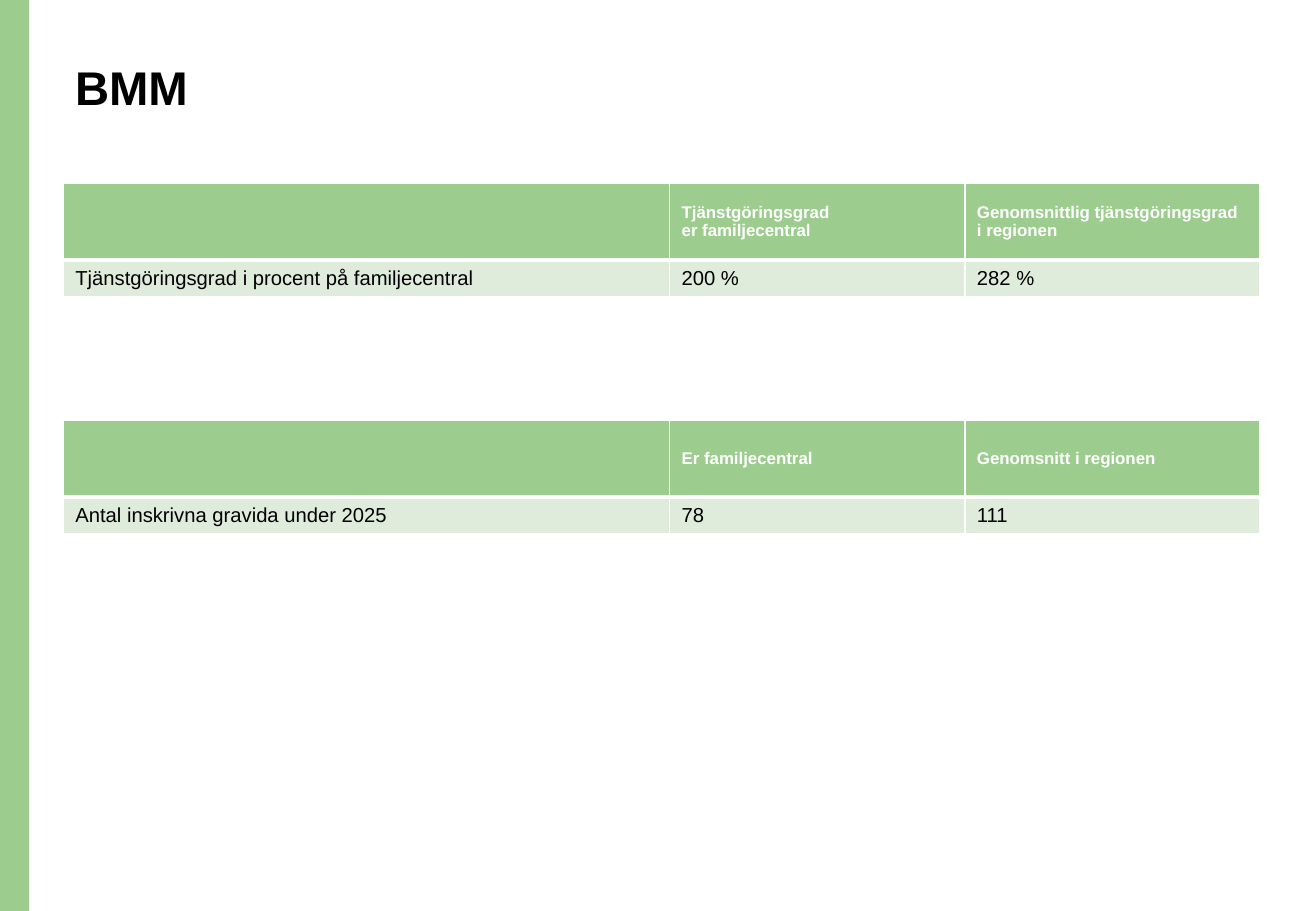
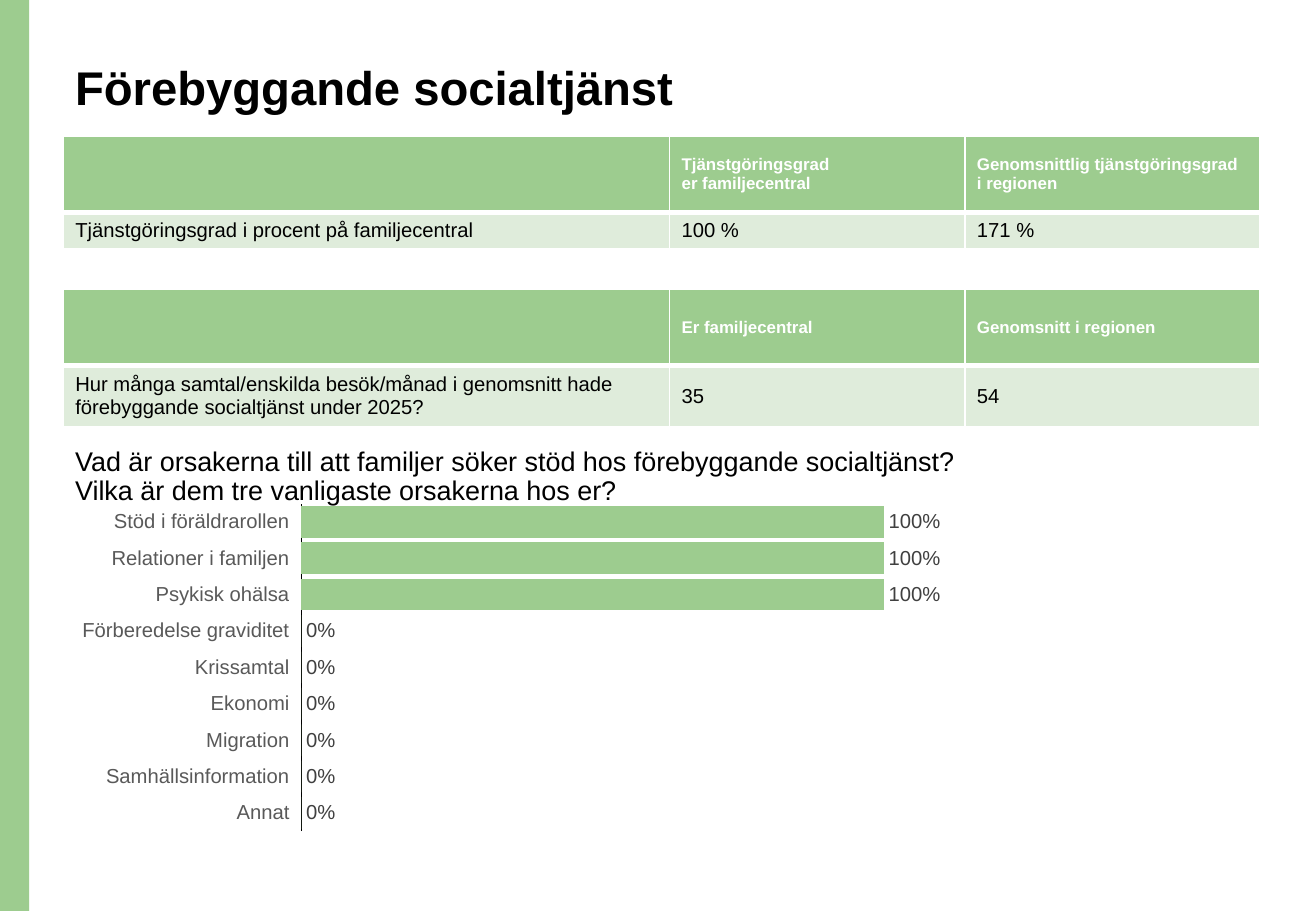
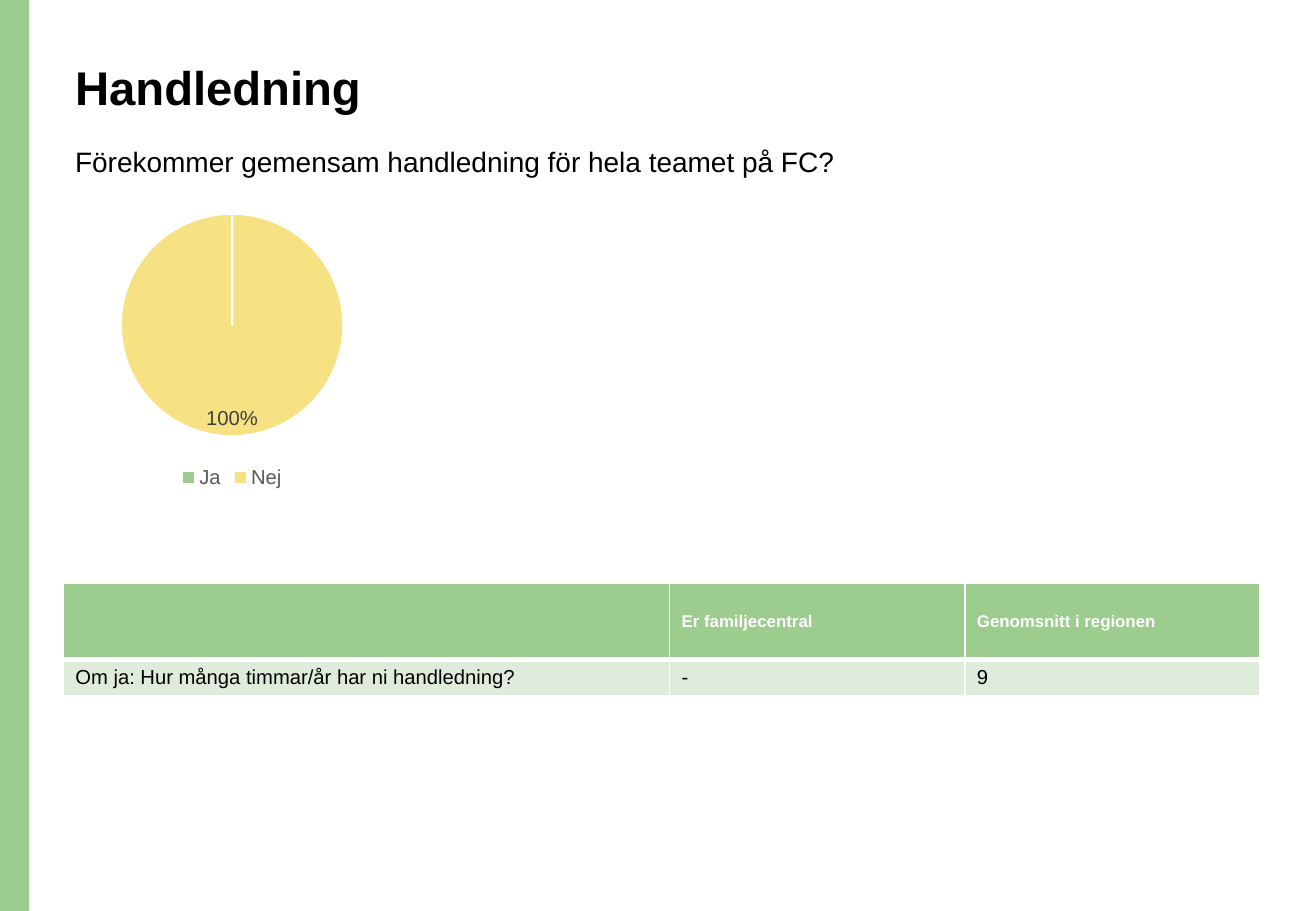
"""Build three slides of family centre statistics with tables and charts."""
from dataclasses import dataclass

from lxml.etree import SubElement
from pptx import Presentation
from pptx.chart.chart import Chart
from pptx.chart.data import CategoryChartData
from pptx.dml.color import RGBColor
from pptx.enum.chart import (
    XL_CHART_TYPE as ChartType,
    XL_LABEL_POSITION as LabelPosition,
    XL_LEGEND_POSITION as LegendPosition,
    XL_TICK_LABEL_POSITION as TickLabelPosition,
    XL_TICK_MARK as TickMark,
)
from pptx.enum.shapes import MSO_SHAPE as Preset
from pptx.enum.text import MSO_ANCHOR as Anchor
from pptx.oxml.ns import qn
from pptx.slide import Slide
from pptx.table import _Cell as Cell
from pptx.text.text import Font
from pptx.util import Pt

PX = 9144
SLIDE_WIDTH, SLIDE_HEIGHT = 1083, 750
BAND_WIDTH = 24
MARGIN = 52
COLUMN_WIDTHS = (499, 243, 243)
HEADER_HEIGHT, BODY_HEIGHT = 63, 23

FONT = "Arial"
GREEN, PALE_GREEN, YELLOW = "9DCC8F", "DFECDB", "F6E183"
BLACK, WHITE = "000000", "FFFFFF"
AXIS_GREY, LABEL_GREY = "595959", "404040"

WORKLOAD_HEADER = (
    "",
    "Tjänstgöringsgrad\ner familjecentral",
    "Genomsnittlig tjänstgöringsgrad\ni regionen",
)
AVERAGE_HEADER = ("", "Er familjecentral", "Genomsnitt i regionen")
WORKLOAD = "Tjänstgöringsgrad i procent på familjecentral"


@dataclass(frozen=True)
class Comparison:
    """A one-row table that sets the centre against the region."""
    top: int
    header: tuple[str, str, str]
    values: tuple[str, str, str]


@dataclass(frozen=True)
class Question:
    """A question shown as running text."""
    top: int
    width: int
    height: int
    size: float
    text: str


@dataclass(frozen=True)
class Answers:
    """The shares of each answer and the place of their chart."""
    top: int
    width: int
    height: int
    shares: dict[str, int]


def rgb(colour: str) -> RGBColor:
    """Turn a hex string into a colour."""
    return RGBColor.from_string(colour)


def style_font(font: Font, size: float, colour: str, bold: bool = False) -> None:
    """Set the face, size, colour and weight of a font."""
    font.name = FONT
    font.size = Pt(size)
    font.bold = bold
    font.color.rgb = rgb(colour)


def add_text(slide: Slide, question: Question, bold: bool = False) -> None:
    """Place a text at the left margin."""
    frame = slide.shapes.add_textbox(
        MARGIN * PX, question.top * PX, question.width * PX, question.height * PX
    ).text_frame
    frame.word_wrap = True
    paragraph = frame.paragraphs[0]
    paragraph.text = question.text
    paragraph.line_spacing = 0.9
    style_font(paragraph.font, question.size, BLACK, bold)


def start_slide(deck: Presentation, title: str) -> Slide:
    """Add a blank slide with the side band and a title."""
    slide = deck.slides.add_slide(deck.slide_layouts[6])
    band = slide.shapes.add_shape(Preset.RECTANGLE, 0, 0, BAND_WIDTH * PX, SLIDE_HEIGHT * PX)
    band.shadow.inherit = False
    band.fill.solid()
    band.fill.fore_color.rgb = rgb(GREEN)
    band.line.fill.background()
    add_text(slide, Question(48, 934, 102, 28, title), bold=True)
    return slide


def add_borders(cell: Cell, top: int, bottom: int) -> None:
    """Give a cell white borders, with the top and bottom widths in points."""
    properties = cell._tc.get_or_add_tcPr()
    for side, width in (("L", 1), ("R", 1), ("T", top), ("B", bottom)):
        line = SubElement(properties, qn(f"a:ln{side}"), w=str(Pt(width)))
        SubElement(SubElement(line, qn("a:solidFill")), qn("a:srgbClr"), val=WHITE)


def add_comparison(slide: Slide, comparison: Comparison) -> None:
    """Draw a comparison table."""
    table = slide.shapes.add_table(
        2, len(COLUMN_WIDTHS), MARGIN * PX, comparison.top * PX,
        sum(COLUMN_WIDTHS) * PX, (HEADER_HEIGHT + BODY_HEIGHT) * PX,
    ).table
    table.horz_banding = False
    for column, width in zip(table.columns, COLUMN_WIDTHS):
        column.width = width * PX
    rows = (
        (comparison.header, HEADER_HEIGHT, GREEN, 10, WHITE, True, 1, 3),
        (comparison.values, BODY_HEIGHT, PALE_GREEN, 12, BLACK, False, 3, 1),
    )
    for row, (texts, height, fill, size, colour, bold, top, bottom) in zip(table.rows, rows):
        row.height = height * PX
        for cell, text in zip(row.cells, texts):
            add_borders(cell, top, bottom)
            cell.fill.solid()
            cell.fill.fore_color.rgb = rgb(fill)
            cell.vertical_anchor = Anchor.MIDDLE
            cell.text_frame.text = text
            for paragraph in cell.text_frame.paragraphs:
                style_font(paragraph.font, size, colour, bold)


def add_answers(
    slide: Slide, answers: Answers, kind: ChartType, position: LabelPosition, label_format: str
) -> Chart:
    """Add a chart of answer shares with its data labels."""
    data = CategoryChartData(number_format="0%")
    data.categories = list(answers.shares)
    data.add_series("Series 1", list(answers.shares.values()))
    chart = slide.shapes.add_chart(
        kind, MARGIN * PX, answers.top * PX, answers.width * PX, answers.height * PX, data
    ).chart
    chart.has_title = False
    chart.has_legend = False
    style_font(chart.font, 10, BLACK)
    labels = chart.plots[0].series[0].data_labels
    labels.show_value = True
    labels.position = position
    labels.number_format = label_format
    labels.number_format_is_linked = False
    style_font(labels.font, 12, LABEL_GREY)
    return chart


def add_reason_bars(slide: Slide, answers: Answers) -> None:
    """Draw the shares as horizontal bars, first answer on top."""
    chart = add_answers(slide, answers, ChartType.BAR_CLUSTERED, LabelPosition.OUTSIDE_END, "0%")
    plot = chart.plots[0]
    plot.gap_width = 15
    plot.vary_by_categories = False
    bars = plot.series[0].format.fill
    bars.solid()
    bars.fore_color.rgb = rgb(GREEN)
    reasons = chart.category_axis
    reasons.reverse_order = True
    reasons.major_tick_mark = reasons.minor_tick_mark = TickMark.NONE
    reasons.tick_label_position = TickLabelPosition.LOW
    reasons.format.line.color.rgb = rgb(BLACK)
    reasons.format.line.width = Pt(0.75)
    style_font(reasons.tick_labels.font, 12, AXIS_GREY)
    share = chart.value_axis
    share.minimum_scale, share.maximum_scale = 0, 1.2
    share.has_major_gridlines = False
    share.visible = False


def add_answer_pie(slide: Slide, answers: Answers) -> None:
    """Draw the shares as a pie with a legend below."""
    chart = add_answers(slide, answers, ChartType.PIE, LabelPosition.INSIDE_END, "0%;;;")
    plot = chart.plots[0]
    plot.vary_by_categories = True
    for index, colour in enumerate((GREEN, YELLOW)):
        slice_format = plot.series[0].points[index].format
        slice_format.fill.solid()
        slice_format.fill.fore_color.rgb = rgb(colour)
        slice_format.line.color.rgb = rgb(WHITE)
        slice_format.line.width = Pt(1.5)
    chart.has_legend = True
    chart.legend.position = LegendPosition.BOTTOM
    chart.legend.include_in_layout = False
    style_font(chart.legend.font, 12, AXIS_GREY)


def main() -> None:
    """Build and save the deck."""
    deck = Presentation()
    deck.slide_width, deck.slide_height = SLIDE_WIDTH * PX, SLIDE_HEIGHT * PX

    midwifery = start_slide(deck, "BMM")
    add_comparison(midwifery, Comparison(151, WORKLOAD_HEADER, (WORKLOAD, "200 %", "282 %")))
    add_comparison(midwifery, Comparison(
        346, AVERAGE_HEADER, ("Antal inskrivna gravida under 2025", "78", "111")))

    social = start_slide(deck, "Förebyggande socialtjänst")
    add_text(social, Question(
        364, 813, 63, 16,
        "Vad är orsakerna till att familjer söker stöd hos förebyggande socialtjänst?\v"
        "Vilka är dem tre vanligaste orsakerna hos er?"))
    add_comparison(social, Comparison(112, WORKLOAD_HEADER, (WORKLOAD, "100 %", "171 %")))
    add_comparison(social, Comparison(
        238, AVERAGE_HEADER,
        ("Hur många samtal/enskilda besök/månad i genomsnitt hade "
         "förebyggande socialtjänst under 2025?", "35", "54")))
    add_reason_bars(social, Answers(409, 787, 281, {
        "Stöd i föräldrarollen": 1,
        "Relationer i familjen": 1,
        "Psykisk ohälsa": 1,
        "Förberedelse graviditet": 0,
        "Krissamtal": 0,
        "Ekonomi": 0,
        "Migration": 0,
        "Samhällsinformation": 0,
        "Annat": 0,
    }))

    supervision = start_slide(deck, "Handledning")
    add_text(supervision, Question(
        117, 667, 46, 16.6, "Förekommer gemensam handledning för hela teamet på FC?"))
    add_answer_pie(supervision, Answers(162, 278, 244, {"Ja": 0, "Nej": 1}))
    add_comparison(supervision, Comparison(
        480, AVERAGE_HEADER, ("Om ja: Hur många timmar/år har ni handledning?", "-", "9")))

    deck.save("out.pptx")


if __name__ == "__main__":
    main()
